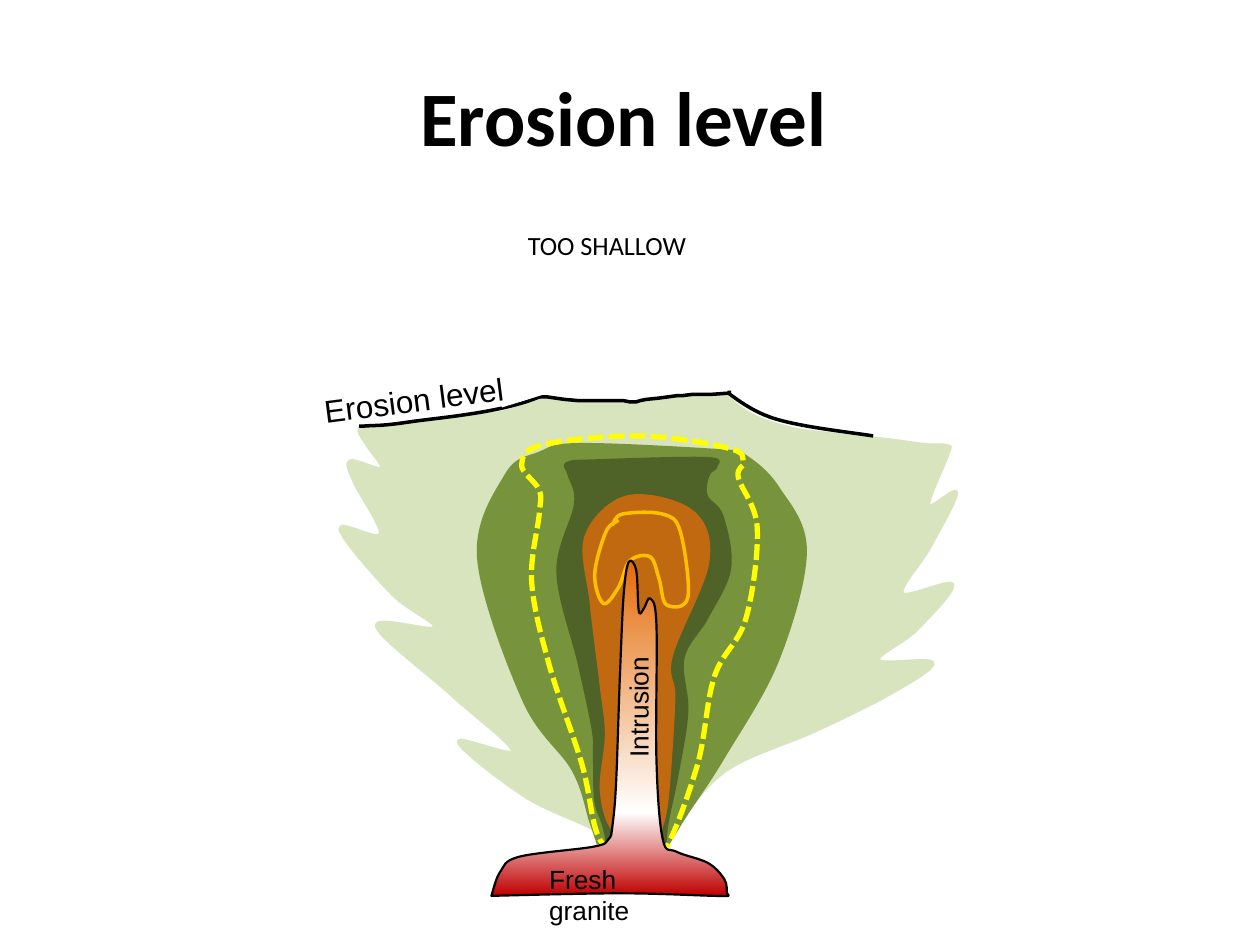
from copy import deepcopy

from lxml import etree
from pptx import Presentation
from pptx.dml.color import RGBColor
from pptx.enum.dml import MSO_LINE
from pptx.enum.shapes import MSO_SHAPE
from pptx.enum.text import MSO_ANCHOR, PP_ALIGN
from pptx.oxml.ns import qn
from pptx.util import Cm, Pt

RECTANGLE = MSO_SHAPE.RECTANGLE
SYS_DASH = MSO_LINE.SQUARE_DOT
MIDDLE = MSO_ANCHOR.MIDDLE
CENTER = PP_ALIGN.CENTER

COLORS = {
    "black": "000000", "white": "FFFFFF", "halo": "D7E4BD", "outer": "77933C",
    "inner": "4F6228", "core": "E46C0A", "shell": "FFFF00", "ore": "FFC000",
    "granite": "C00000",
}
GRID_WIDTH = 600

HALO = [
    (340, 450), (378, 410), (449, 379), (509, 349), (540, 326), (497, 324),
    (527, 300), (556, 264), (516, 271), (538, 234), (559, 191), (537, 201),
    (552, 161), (552, 154), (534, 153), (504, 149), (473, 146), (447, 143),
    (428, 140), (396, 129), (350, 99), (317, 118), (271, 104), (234, 116),
    (200, 127), (174, 130), (100, 139), (91, 139), (85, 142), (92, 154),
    (103, 172), (78, 166), (81, 182), (102, 224), (70, 220), (111, 271),
    (145, 298), (99, 297), (158, 351), (207, 396), (164, 389), (217, 432),
    (271, 458), (278, 470), (289, 476), (329, 464),
]
OUTER_ZONE = [
    (275, 470), (269, 452), (255, 411), (216, 356), (180, 243), (202, 177),
    (228, 160), (261, 153), (373, 158), (391, 162), (417, 187), (439, 237),
    (417, 324), (374, 401), (344, 447), (328, 473),
]
INNER_ZONE = [
    (278, 475), (282, 469), (279, 454), (273, 435), (272, 400), (271, 379),
    (260, 327), (243, 254), (257, 200), (252, 177), (250, 168), (270, 166),
    (360, 164), (368, 170), (363, 175), (360, 184), (361, 195), (373, 210),
    (379, 251), (361, 290), (342, 322), (345, 365), (337, 416), (329, 455),
    (328, 476), (328, 482),
]
CORE = [
    (285, 458), (276, 427), (280, 383), (276, 345), (268, 279), (264, 225),
    (298, 193), (350, 205), (363, 246), (334, 321), (336, 355), (331, 431),
    (326, 457), (323, 458), (305, 458),
]
SHELL = [
    (298, 484), (275, 464), (262, 407), (236, 328), (222, 262), (228, 208),
    (228, 189), (214, 169), (231, 153), (309, 146), (379, 156), (390, 167),
    (386, 179), (401, 219), (392, 291), (367, 337), (353, 409), (324, 481),
]
ORE = [
    (291, 213), (281, 222), (272, 256), (279, 279), (291, 266), (300, 245),
    (316, 242), (323, 259), (329, 280), (346, 274), (340, 222), (326, 208),
    (294, 208), (286, 217),
]
INTRUSION = [
    (190, 511), (197, 492), (212, 480), (271, 472), (283, 466), (286, 456),
    (289, 421), (292, 337), (295, 272), (299, 246), (305, 253), (307, 285),
    (311, 283), (316, 275), (321, 296), (321, 403), (326, 466), (337, 476),
    (362, 485), (375, 498), (377, 509), (378, 511), (366, 511), (292, 509),
    (190, 511),
]
GROUND = [
    (85, 138), (91, 138), (124, 135), (217, 119), (307, 77), (314, 84),
    (323, 84), (327, 78), (359, 98), (411, 131), (493, 146),
]
CRATER = [
    (226, 111), (226, 75), (379, 75), (379, 112), (365, 113), (350, 113),
    (342, 114), (338, 114), (323, 116), (313, 117), (308, 118), (305, 119),
    (300, 119), (295, 118), (292, 118), (284, 118), (277, 118), (271, 118),
    (259, 118), (248, 117), (234, 115), (230, 115), (226, 115), (226, 114),
    (226, 109),
]


def color(name):
    """Return the named palette colour."""
    return RGBColor.from_string(COLORS[name])


def paint(shape, fill=None, line=None, width=2):
    """Give a shape a plain fill and line, or none of either."""
    shape.shadow.inherit = False
    if fill:
        shape.fill.solid()
        shape.fill.fore_color.rgb = color(fill)
    else:
        shape.fill.background()
    if line:
        shape.line.color.rgb = color(line)
        shape.line.width = Pt(width)
    else:
        shape.line.fill.background()


def smooth_path(shape, knots, closed):
    """Turn the straight segments between knots into flowing curves."""
    left, top = (min(axis) for axis in zip(*knots))
    count = len(knots)

    def knot(i):
        return knots[i % count] if closed else knots[max(0, min(i, count - 1))]

    for i, segment in enumerate(list(shape._element.iter(qn("a:lnTo")))):
        before, start, end, after = (knot(i + step) for step in (-1, 0, 1, 2))
        if start == end:
            continue
        leaving = [s + (e - b) / 6 for b, s, e in zip(before, start, end)]
        arriving = [e - (a - s) / 6 for s, e, a in zip(start, end, after)]
        curve = etree.Element(qn("a:cubicBezTo"))
        for x, y in (leaving, arriving, end):
            etree.SubElement(curve, qn("a:pt"), x=str(round(x - left)), y=str(round(y - top)))
        segment.getparent().replace(segment, curve)


def add_outline(slide, box, grid_knots, closed=True, smooth=True, **look):
    """Draw an outline through knots on the grid of the box."""
    left, top, width = box
    unit = width / GRID_WIDTH
    knots = [(round(left + x * unit), round(top + y * unit)) for x, y in grid_knots]
    builder = slide.shapes.build_freeform(*knots[0], scale=1.0)
    builder.add_line_segments(knots[1:] + knots[:1] if closed else knots[1:], close=closed)
    outline = builder.convert_to_shape()
    if smooth:
        smooth_path(outline, knots, closed)
    paint(outline, **look)
    return outline


def on_grid(box, *lengths):
    """Convert left, top, width and height on the grid to slide lengths."""
    left, top, width = box
    x, y, w, h = (round(length * width / GRID_WIDTH) for length in lengths)
    return left + x, top + y, w, h


def add_label(slide, place, text, size, font="Arial", rotation=0):
    """Add a left-aligned label."""
    label = slide.shapes.add_textbox(*place)
    label.rotation = rotation
    frame = label.text_frame
    frame.word_wrap = True
    frame.text = text
    style = frame.paragraphs[0].runs[0].font
    style.name, style.size = font, Pt(size)
    style.color.rgb = color("black")


def add_mask(slide, place, rotation=0):
    """Cover part of the drawing with a white rectangle."""
    mask = slide.shapes.add_shape(RECTANGLE, *place)
    mask.rotation = rotation
    paint(mask, "white")


def add_intrusion(slide, box):
    """Draw the intrusion, shaded upwards from granite red to orange."""
    intrusion = add_outline(slide, box, INTRUSION, line="black", width=1.25)
    intrusion.fill.gradient()
    intrusion.fill.gradient_angle = 90
    stop_list = next(intrusion._element.iter(qn("a:gsLst")))
    stop_list.insert(1, deepcopy(stop_list[0]))
    shades = [(0, "granite"), (0.25, "white"), (1, "core")]
    for stop, (position, name) in zip(intrusion.fill.gradient_stops, shades):
        stop.position = position
        stop.color.rgb = color(name)


def add_section(slide, box):
    """Draw the cross-section with its alteration zones and labels."""
    for knots, name, closed in (
        (HALO, "halo", True), (OUTER_ZONE, "outer", False), (INNER_ZONE, "inner", True)
    ):
        add_outline(slide, box, knots, closed, fill=name, line=name)
    core = add_outline(slide, box, CORE, fill="core")
    tint = next(core._element.iter(qn("a:srgbClr")))
    etree.SubElement(tint, qn("a:alpha"), val="77000")
    shell = add_outline(slide, box, SHELL, line="shell", width=3)
    shell.line.dash_style = SYS_DASH
    add_outline(slide, box, ORE, closed=False, line="ore")
    add_intrusion(slide, box)
    add_label(slide, on_grid(box, 226, 480, 139, 34), "Fresh granite", 15)
    add_label(slide, on_grid(box, 256, 343, 101, 35), "Intrusion", 15, rotation=270)
    add_outline(slide, box, GROUND, closed=False, line="black")
    add_outline(slide, box, CRATER, closed=False, smooth=False, fill="white", line="black")
    add_mask(slide, on_grid(box, 180, 41, 246, 69))
    add_mask(slide, on_grid(box, 195, 101, 46, 16), 342.8)
    add_label(slide, on_grid(box, 47, 97, 165, 40), "Erosion level", 18, rotation=352.7)


def add_heading(slide, left, top, width, height):
    """Place and format the slide title."""
    title = slide.shapes.title
    title.left, title.top, title.width, title.height = left, top, width, height
    frame = title.text_frame
    frame.text = "Erosion level"
    frame.vertical_anchor = MIDDLE
    frame.paragraphs[0].alignment = CENTER
    style = frame.paragraphs[0].runs[0].font
    style.name, style.size, style.bold = "Calibri", Pt(44), True
    style.color.rgb = color("black")


def main():
    """Build and save the slide."""
    deck = Presentation()
    deck.slide_width, deck.slide_height = Cm(25.4), Cm(19.05)
    slide = deck.slides.add_slide(deck.slide_layouts[5])
    add_heading(slide, Cm(1.14), Cm(0.74), Cm(22.86), Cm(3.18))
    add_section(slide, (Cm(5.08), Cm(5.08), Cm(15.24)))
    caption_place = Cm(10.39), Cm(4.5), Cm(3.73), Cm(0.89)
    add_label(slide, caption_place, "TOO SHALLOW", 15, "Calibri")
    deck.save("out.pptx")


if __name__ == "__main__":
    main()
